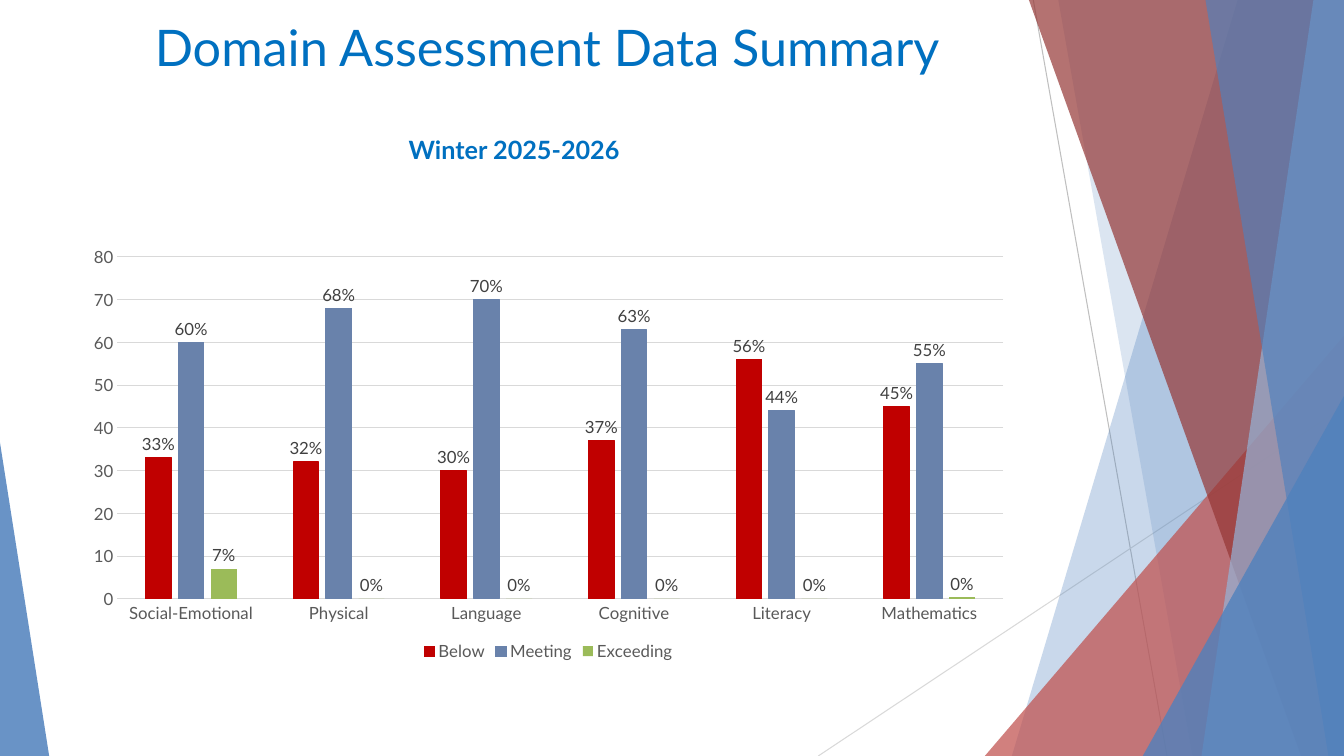
import pptx
import pptx.chart.data
import pptx.dml.color
import pptx.enum.chart
import pptx.enum.shapes
import pptx.enum.text
import pptx.oxml
import pptx.oxml.ns
import pptx.util
from lxml import etree

Cm = pptx.util.Cm
Pt = pptx.util.Pt
RGBColor = pptx.dml.color.RGBColor
qn = pptx.oxml.ns.qn

# Colours and font
WHITE = RGBColor(0xFF, 0xFF, 0xFF)
HEADING = RGBColor(0x00, 0x70, 0xC0)
BLUE = RGBColor(0x4F, 0x81, 0xBD)
PALE_BLUE = RGBColor(0x95, 0xB3, 0xD7)
RED = RGBColor(0xC0, 0x50, 0x4D)
DARK_RED = RGBColor(0x95, 0x37, 0x35)
GREY = RGBColor(0xBF, 0xBF, 0xBF)
LIGHT_GREY = RGBColor(0xD9, 0xD9, 0xD9)
AXIS_TEXT = RGBColor(0x59, 0x59, 0x59)
LABEL_TEXT = RGBColor(0x40, 0x40, 0x40)
FONT = "Lato"

# Content
TITLE = "Domain Assessment Data Summary"
PERIOD = "Winter 2025-2026"
DOMAINS = ["Social-Emotional", "Physical", "Language", "Cognitive", "Literacy", "Mathematics"]
# level, values, colour, outlined
LEVELS = [
    ("Below", (33, 32, 30, 37, 56, 45), RGBColor(0xC0, 0x00, 0x00), True),
    ("Meeting", (60, 68, 70, 63, 44, 55), RGBColor(0x69, 0x82, 0xAB), True),
    ("Exceeding", (7, 0, 0, 0, 0, 0.37), RGBColor(0x9B, 0xBB, 0x59), False),
]

# Decoration, in cm
WIDTH, HEIGHT = 33.87, 19.05
RAYS = [
    ((26.04, 0), (29.41, HEIGHT), GREY),
    ((WIDTH, 10.24), (20.62, HEIGHT), LIGHT_GREY),
]
# A band runs to the right edge: left x at the top, left x at the bottom.
# A triangle stands on the bottom edge: left, top, width, apex position.
FACETS = [
    ("band", (31.19, 25.5), BLUE, 30),
    ("band", (26.67, 30.05), BLUE, 20),
    ("triangle", (24.82, 8.46, WIDTH - 24.82, 1), RED, 72),
    ("band", (25.93, 32.79), DARK_RED, 70),
    ("band", (33.1, 30.28), PALE_BLUE, 70),
    ("band", (30.38, 33.48), BLUE, 65),
    ("triangle", (28.8, 9.98, WIDTH - 28.8, 1), BLUE, 80),
    ("triangle", (0, 11.15, 1.24, 0), BLUE, 85),
]


def style_font(font, size, color, bold=False):
    font.name, font.size, font.bold = FONT, Pt(size), bold
    font.color.rgb = color


def write_heading(shape, text, size, bold=False):
    frame = shape.text_frame
    frame.text = text
    frame.word_wrap = True
    frame.vertical_anchor = pptx.enum.text.MSO_ANCHOR.TOP
    paragraph = frame.paragraphs[0]
    paragraph.alignment = pptx.enum.text.PP_ALIGN.CENTER
    style_font(paragraph.runs[0].font, size, HEADING, bold)


def add_facet(shapes, kind, geometry, color, opacity):
    if kind == "band":
        top_x, bottom_x = geometry
        builder = shapes.build_freeform(Cm(top_x), 0)
        corners = [(WIDTH, 0), (WIDTH, HEIGHT), (bottom_x, HEIGHT)]
        builder.add_line_segments([(Cm(x), Cm(y)) for x, y in corners], close=True)
        facet = builder.convert_to_shape()
    else:
        left, top, width, apex = geometry
        facet = shapes.add_shape(pptx.enum.shapes.MSO_SHAPE.ISOSCELES_TRIANGLE,
                                 Cm(left), Cm(top), Cm(width), Cm(HEIGHT - top))
        facet.adjustments[0] = apex
    facet.shadow.inherit = False
    facet.line.fill.background()
    facet.fill.solid()
    facet.fill.fore_color.rgb = color
    color_element = facet.fill._xPr.find(".//" + qn("a:srgbClr"))
    etree.SubElement(color_element, qn("a:alpha"), val=str(opacity * 1000))


def add_level_chart(shapes):
    data = pptx.chart.data.CategoryChartData()
    data.categories = DOMAINS
    for level, values, _, _ in LEVELS:
        data.add_series(level, values)
    chart = shapes.add_chart(pptx.enum.chart.XL_CHART_TYPE.COLUMN_CLUSTERED,
                             Cm(1.88), Cm(5.99), Cm(23.88), Cm(10.77), data).chart
    chart.has_title = False
    style_font(chart.font, 12, AXIS_TEXT)

    # Legend
    chart.has_legend = True
    chart.legend.position = pptx.enum.chart.XL_LEGEND_POSITION.BOTTOM
    chart.legend.include_in_layout = False
    style_font(chart.legend.font, 12, AXIS_TEXT)

    # Axes
    for axis in (chart.category_axis, chart.value_axis):
        axis.major_tick_mark = pptx.enum.chart.XL_TICK_MARK.NONE
        axis.minor_tick_mark = pptx.enum.chart.XL_TICK_MARK.NONE
        style_font(axis.tick_labels.font, 12, AXIS_TEXT)
    percent_axis = chart.value_axis
    percent_axis.minimum_scale, percent_axis.maximum_scale = 0, 80
    percent_axis.major_unit = 10
    percent_axis.format.line.fill.background()
    for line in (chart.category_axis.format.line, percent_axis.major_gridlines.format.line):
        line.color.rgb = LIGHT_GREY
        line.width = Pt(0.75)

    # Columns and their percentages
    plot = chart.plots[0]
    plot.gap_width, plot.overlap, plot.vary_by_categories = 219, -27, False
    for series, (_, _, color, outlined) in zip(plot.series, LEVELS):
        series.format.fill.solid()
        series.format.fill.fore_color.rgb = color
        if outlined:
            series.format.line.color.rgb = color
            series.format.line.width = Pt(0.75)
        labels = series.data_labels
        labels.show_value = True
        labels.number_format = '0"%"'
        labels.number_format_is_linked = False
        labels.position = pptx.enum.chart.XL_LABEL_POSITION.OUTSIDE_END
        style_font(labels.font, 12, LABEL_TEXT)

    # Plot area inside the chart frame
    plot_area = chart._chartSpace.find(".//" + qn("c:plotArea"))
    layout = plot_area.find(qn("c:layout"))
    if layout is None:
        layout = etree.Element(qn("c:layout"))
        plot_area.insert(0, layout)
    manual = etree.SubElement(layout, qn("c:manualLayout"))
    settings = [("layoutTarget", "inner"), ("xMode", "edge"), ("yMode", "edge"),
                ("x", "0.045"), ("y", "0.045"), ("w", "0.935"), ("h", "0.8")]
    for setting, value in settings:
        etree.SubElement(manual, qn("c:" + setting), val=value)


def main():
    deck = pptx.Presentation()
    deck.slide_width, deck.slide_height = Cm(WIDTH), Cm(HEIGHT)
    slide = deck.slides.add_slide(deck.slide_layouts[5])
    slide.background.fill.solid()
    slide.background.fill.fore_color.rgb = WHITE
    shapes = slide.shapes

    # Rays and facets
    for start, end, color in RAYS:
        ray = shapes.add_connector(pptx.enum.shapes.MSO_CONNECTOR.STRAIGHT,
                                   *(Cm(value) for value in start + end))
        ray.line.color.rgb = color
        ray.line.width = Pt(0.75)
        etree.SubElement(ray._element.spPr, qn("a:effectLst"))
    for facet in FACETS:
        add_facet(shapes, *facet)

    # Headings
    title = shapes.title
    title.left, title.top, title.width, title.height = Cm(1.85), Cm(0.28), Cm(23.88), Cm(3.66)
    write_heading(title, TITLE, 36)
    period = shapes.add_textbox(Cm(5.79), Cm(3.25), Cm(14.33), Cm(1.4))
    write_heading(period, PERIOD, 18, bold=True)

    add_level_chart(shapes)
    deck.save("out.pptx")


if __name__ == "__main__":
    main()
